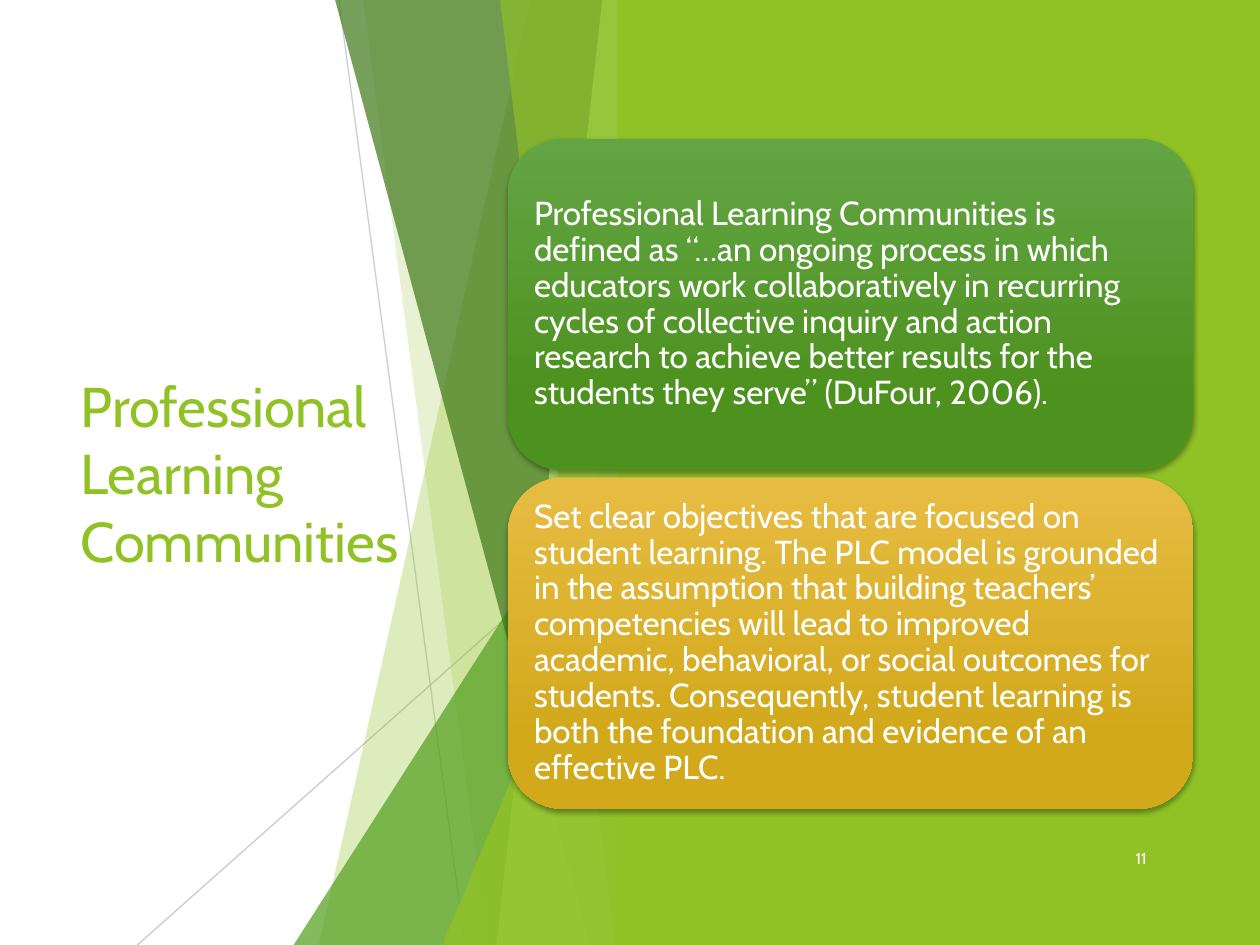
from dataclasses import dataclass

from lxml import etree
from pptx import Presentation
from pptx.dml.color import RGBColor
from pptx.enum.shapes import MSO_CONNECTOR, MSO_SHAPE
from pptx.enum.text import MSO_ANCHOR, PP_ALIGN
from pptx.oxml import parse_xml
from pptx.oxml.ns import nsdecls, qn
from pptx.util import Pt

RECTANGLE = MSO_SHAPE.RECTANGLE
ROUNDED = MSO_SHAPE.ROUNDED_RECTANGLE
TRIANGLE = MSO_SHAPE.ISOSCELES_TRIANGLE
STRAIGHT = MSO_CONNECTOR.STRAIGHT
MIDDLE = MSO_ANCHOR.MIDDLE
LEFT, RIGHT = PP_ALIGN.LEFT, PP_ALIGN.RIGHT

FONT = "Cabin"
COLORS = {
    "white": "FFFFFF",
    "lime": "90C226",
    "green": "54A021",
    "dark_green": "3F7819",
    "pale_lime": "C0E474",
    "grey": "BFBFBF",
    "card_green_top": "63A545",
    "card_green_bottom": "4D921E",
    "card_gold_top": "E7BC43",
    "card_gold_bottom": "D2A91B",
}
SLIDE_WIDTH, SLIDE_HEIGHT = 720, 540
FACET_RIGHT = 360


@dataclass
class Ray:
    start: tuple[float, float]
    end: tuple[float, float]
    opacity: int


@dataclass
class Facet:
    """A sliver whose slanted left edge runs from top_x to bottom_x."""
    top_x: float
    bottom_x: float
    color: str
    opacity: int


@dataclass
class Wedge:
    """A right triangle standing in the lower corner of the facets."""
    left: float
    top: float
    color: str
    opacity: int


@dataclass
class Card:
    text: str
    top_color: str
    bottom_color: str


RAYS = [
    Ray((193.7, 0), (265.7, 540), 75),
    Ray((360, 290.2), (78.5, 540), 80),
]
FACETS = [
    Facet(303.1, 182.2, "lime", 30),
    Facet(207.4, 278.6, "lime", 20),
    Wedge(167.8, 239.8, "green", 72),
    Facet(191.5, 337, "dark_green", 70),
    Facet(344.2, 283.7, "pale_lime", 70),
    Facet(285.8, 351.4, "lime", 65),
    Wedge(252.7, 283, "lime", 80),
]
CARDS = [
    Card(
        "Professional Learning Communities is defined as “…an ongoing process in which "
        "educators work collaboratively in recurring cycles of collective inquiry and "
        "action research to achieve better results for the students they serve” "
        "(DuFour, 2006).",
        "card_green_top", "card_green_bottom",
    ),
    Card(
        "Set clear objectives that are focused on student learning. The PLC model is "
        "grounded in the assumption that building teachers’ competencies will lead to "
        "improved academic, behavioral, or social outcomes for students. Consequently, "
        "student learning is both the foundation and evidence of an effective PLC.",
        "card_gold_top", "card_gold_bottom",
    ),
]
CARD_LEFT, CARD_TOP, CARD_WIDTH, CARD_HEIGHT = 290.2, 79.2, 391.7, 189.4
CARD_STEP = 193.6
CARD_INSET = 5.76


def rgb(name: str) -> RGBColor:
    return RGBColor.from_string(COLORS[name])


def set_opacity(element, percent: int) -> None:
    color = next(element.iter(qn("a:srgbClr")))
    etree.SubElement(color, qn("a:alpha")).set("val", str(percent * 1000))


def paint(shape, color: str, opacity: int = 100) -> None:
    shape.shadow.inherit = False
    shape.fill.solid()
    shape.fill.fore_color.rgb = rgb(color)
    shape.line.fill.background()
    if opacity < 100:
        set_opacity(shape.fill._xPr, opacity)


def write(text_frame, text: str, size: float, color: str, align=LEFT) -> None:
    text_frame.text = text
    text_frame.word_wrap = True
    text_frame.vertical_anchor = MIDDLE
    paragraph = text_frame.paragraphs[0]
    paragraph.alignment = align
    font = paragraph.runs[0].font
    font.name, font.size, font.color.rgb = FONT, Pt(size), rgb(color)


def add_ray(slide, ray: Ray) -> None:
    connector = slide.shapes.add_connector(
        STRAIGHT, *(Pt(value) for value in ray.start + ray.end))
    connector.line.width = Pt(0.75)
    connector.line.color.rgb = rgb("grey")
    properties = connector._element.spPr
    set_opacity(properties, ray.opacity)
    etree.SubElement(properties, qn("a:effectLst"))


def add_facet(slide, facet: Facet) -> None:
    builder = slide.shapes.build_freeform(Pt(facet.top_x), 0)
    corners = [(FACET_RIGHT, 0), (FACET_RIGHT, SLIDE_HEIGHT), (facet.bottom_x, SLIDE_HEIGHT)]
    builder.add_line_segments([(Pt(x), Pt(y)) for x, y in corners], close=True)
    paint(builder.convert_to_shape(), facet.color, facet.opacity)


def add_wedge(slide, wedge: Wedge) -> None:
    shape = slide.shapes.add_shape(
        TRIANGLE, Pt(wedge.left), Pt(wedge.top),
        Pt(FACET_RIGHT - wedge.left), Pt(SLIDE_HEIGHT - wedge.top))
    shape.adjustments[0] = 1
    paint(shape, wedge.color, wedge.opacity)


def add_card(slide, card: Card, top: float) -> None:
    shape = slide.shapes.add_shape(
        ROUNDED, Pt(CARD_LEFT), Pt(top), Pt(CARD_WIDTH), Pt(CARD_HEIGHT))
    shape.line.fill.background()
    shape.fill.gradient()
    shape.fill.gradient_angle = 270
    stops = zip(shape.fill.gradient_stops, (0, 0.78), (card.top_color, card.bottom_color))
    for stop, position, color in stops:
        stop.position = position
        stop.color.rgb = rgb(color)
    shape._element.spPr.append(parse_xml(
        f'<a:effectLst {nsdecls("a")}><a:outerShdw blurRad="{Pt(3)}" dist="{Pt(2)}" '
        'dir="5400000" rotWithShape="0"><a:srgbClr val="000000"><a:alpha val="35000"/>'
        '</a:srgbClr></a:outerShdw></a:effectLst>'))
    frame = shape.text_frame
    frame.margin_left = frame.margin_right = Pt(CARD_INSET)
    frame.margin_top = frame.margin_bottom = Pt(CARD_INSET)
    write(frame, card.text, 19, "white")
    frame.paragraphs[0].line_spacing = 0.9


def main() -> None:
    presentation = Presentation()
    presentation.slide_width = Pt(SLIDE_WIDTH)
    presentation.slide_height = Pt(SLIDE_HEIGHT)
    slide = presentation.slides.add_slide(presentation.slide_layouts[6])

    title = slide.shapes.add_textbox(Pt(38.9), Pt(108.7), Pt(209.5), Pt(322.6))
    write(title.text_frame, "Professional Learning Communities", 32, "lime")

    for ray in RAYS:
        add_ray(slide, ray)
    for piece in FACETS:
        if isinstance(piece, Facet):
            add_facet(slide, piece)
        else:
            add_wedge(slide, piece)
    panel = slide.shapes.add_shape(RECTANGLE, Pt(352.8), 0, Pt(367.2), Pt(SLIDE_HEIGHT))
    paint(panel, "lime")

    number = slide.shapes.add_textbox(Pt(622.1), Pt(475.9), Pt(40.3), Pt(28.8))
    write(number.text_frame, "11", 9, "white", RIGHT)

    for index, card in enumerate(CARDS):
        add_card(slide, card, CARD_TOP + index * CARD_STEP)

    presentation.save("out.pptx")


if __name__ == "__main__":
    main()
